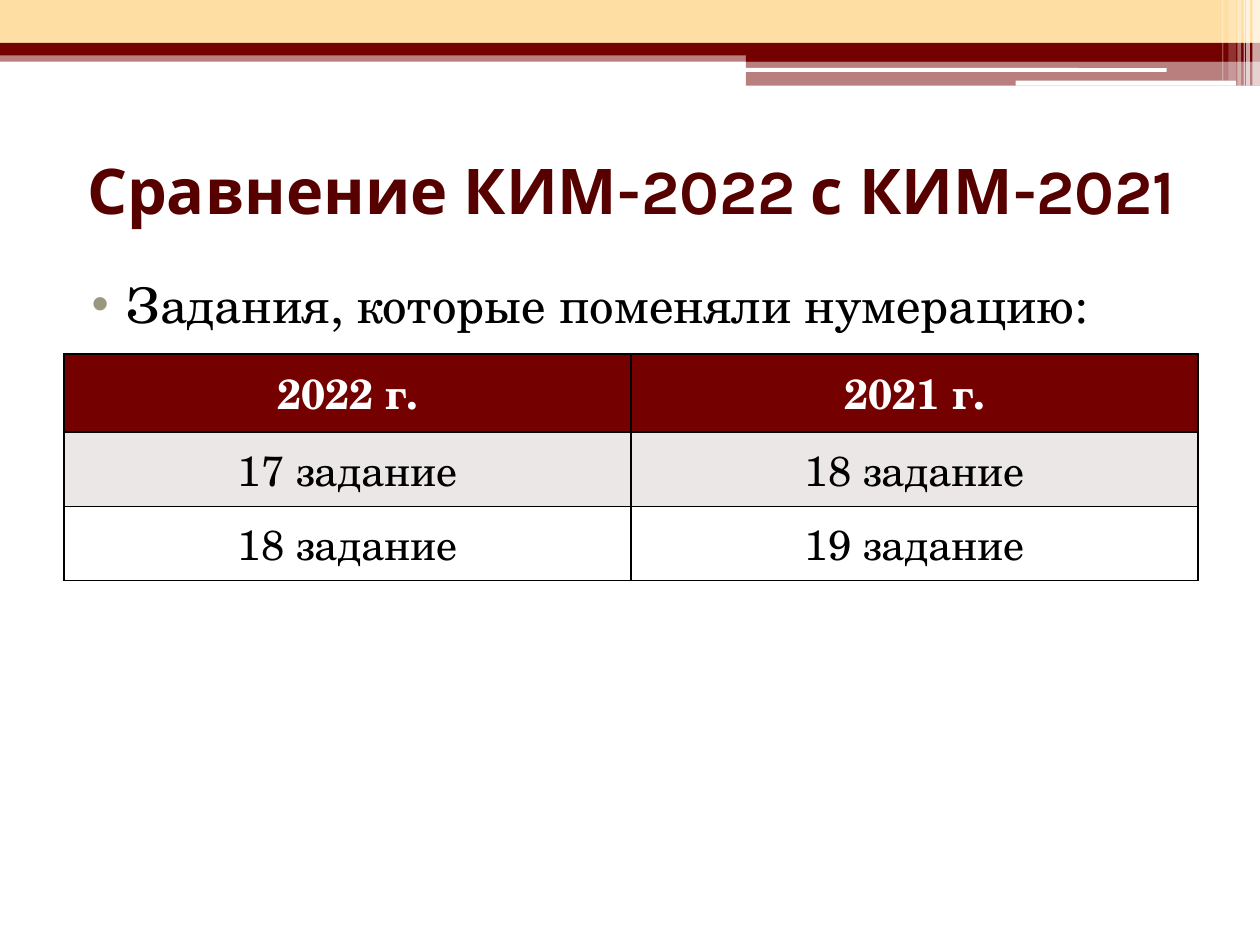
from lxml.etree import SubElement
from pptx import Presentation
from pptx.dml.color import RGBColor
from pptx.enum.shapes import MSO_SHAPE
from pptx.enum.text import MSO_ANCHOR, PP_ALIGN
from pptx.oxml import parse_xml
from pptx.oxml.ns import nsdecls, qn
from pptx.util import Inches, Pt

HEADING_FONT = "Karla"
BODY_FONT = "TeX Gyre Schola"
DARK_RED = "740000"
SAND = "FFDEA4"
WHITE = "FFFFFF"
BLACK = "000000"

# left, top, width, height, colour, opacity in percent
BANDS = [
    (0, 0.4, 10, 0.09, DARK_RED, 50),
    (0, 0, 10, 0.34, SAND, 100),
    (0, 0.34, 10, 0.1, DARK_RED, 100),
    (5.92, 0.39, 4.08, 0.1, DARK_RED, 100),
    (5.92, 0.48, 4.08, 0.2, DARK_RED, 50),
]
ROUNDED_BARS = [(5.91, 0.54, 3.35, 0.03), (8.06, 0.64, 1.75, 0.04)]
# left, width, height, opacity in percent
EDGE_STRIPES = [
    (9.94, 0.06, 0.68, 65),
    (9.89, 0.03, 0.68, 65),
    (9.87, 0.01, 0.68, 60),
    (9.82, 0.03, 0.68, 40),
    (9.75, 0.06, 0.64, 20),
    (9.7, 0.01, 0.64, 30),
]
TASK_ROWS = [
    ("2022 г.", "2021 г."),
    ("17 задание", "18 задание"),
    ("18 задание", "19 задание"),
]
ROW_HEIGHTS = [0.62, 0.59, 0.59]
ROW_FILLS = [DARK_RED, "EBE7E7", WHITE]


def set_fill(fill, color, opacity=100):
    fill.solid()
    fill.fore_color.rgb = RGBColor.from_string(color)
    if opacity < 100:
        color_node = fill._xPr.find(qn("a:solidFill"))[0]
        SubElement(color_node, qn("a:alpha"), val=str(opacity * 1000))


def add_bar(slide, left, top, width, height, color, opacity=100,
            kind=MSO_SHAPE.RECTANGLE):
    bar = slide.shapes.add_shape(
        kind, Inches(left), Inches(top), Inches(width), Inches(height))
    bar.shadow.inherit = False
    bar.line.fill.background()
    set_fill(bar.fill, color, opacity)


def write_text(frame, text, *, size, font=BODY_FONT, color=BLACK, bold=False,
               align=PP_ALIGN.CENTER):
    paragraph = frame.paragraphs[0]
    paragraph.alignment = align
    run = paragraph.add_run()
    run.text = text
    run.font.name = font
    run.font.size = Pt(size)
    run.font.bold = bold
    run.font.color.rgb = RGBColor.from_string(color)
    return paragraph


def add_text_frame(slide, left, top, width, height, anchor):
    box = slide.shapes.add_textbox(
        Inches(left), Inches(top), Inches(width), Inches(height))
    frame = box.text_frame
    frame.word_wrap = True
    frame.vertical_anchor = anchor
    return frame


def add_bullet(paragraph, color, indent, hanging):
    properties = paragraph._p.get_or_add_pPr()
    properties.set("marL", str(Inches(indent)))
    properties.set("indent", str(-Inches(hanging)))
    bullet_color = SubElement(properties, qn("a:buClr"))
    SubElement(bullet_color, qn("a:srgbClr"), val=color)
    SubElement(properties, qn("a:buFont"), typeface="Arial")
    SubElement(properties, qn("a:buChar"), char="•")


def add_borders(cell, color, width):
    properties = cell._tc.get_or_add_tcPr()
    for position, side in enumerate(("lnL", "lnR", "lnT", "lnB")):
        properties.insert(position, parse_xml(
            f'<a:{side} {nsdecls("a")} w="{Pt(width)}"><a:solidFill>'
            f'<a:srgbClr val="{color}"/></a:solidFill></a:{side}>'))


def add_task_table(slide):
    table = slide.shapes.add_table(
        len(TASK_ROWS), 2, Inches(0.51), Inches(2.81),
        Inches(9), Inches(sum(ROW_HEIGHTS))).table
    table.horz_banding = False
    for row_index, tasks in enumerate(TASK_ROWS):
        table.rows[row_index].height = Inches(ROW_HEIGHTS[row_index])
        is_header = row_index == 0
        for column_index, task in enumerate(tasks):
            cell = table.cell(row_index, column_index)
            cell.vertical_anchor = MSO_ANCHOR.MIDDLE
            set_fill(cell.fill, ROW_FILLS[row_index])
            add_borders(cell, BLACK, 1)
            write_text(cell.text_frame, task, size=24, bold=is_header,
                       color=WHITE if is_header else BLACK)


def add_header_decoration(slide):
    for band in BANDS:
        add_bar(slide, *band)
    for bar in ROUNDED_BARS:
        add_bar(slide, *bar, WHITE, kind=MSO_SHAPE.ROUNDED_RECTANGLE)
    for left, width, height, opacity in EDGE_STRIPES:
        add_bar(slide, left, 0, width, height, WHITE, opacity)


def main():
    presentation = Presentation()
    presentation.slide_width = Inches(10)
    presentation.slide_height = Inches(7.5)
    slide = presentation.slides.add_slide(presentation.slide_layouts[6])
    set_fill(slide.background.fill, WHITE)

    add_header_decoration(slide)
    title = add_text_frame(slide, 0.51, 0.92, 9, 1.17, MSO_ANCHOR.MIDDLE)
    write_text(title, "Сравнение КИМ-2022 с КИМ-2021", size=36,
               font=HEADING_FONT, color="570000", bold=True)
    body = add_text_frame(slide, 0.51, 2.13, 9, 4.73, MSO_ANCHOR.TOP)
    intro = write_text(body, "Задания, которые поменяли нумерацию:", size=28,
                       align=PP_ALIGN.JUSTIFY)
    intro.space_before = Pt(3)
    add_bullet(intro, "99987F", indent=0.4, hanging=0.28)
    add_task_table(slide)

    presentation.save("out.pptx")


if __name__ == "__main__":
    main()
